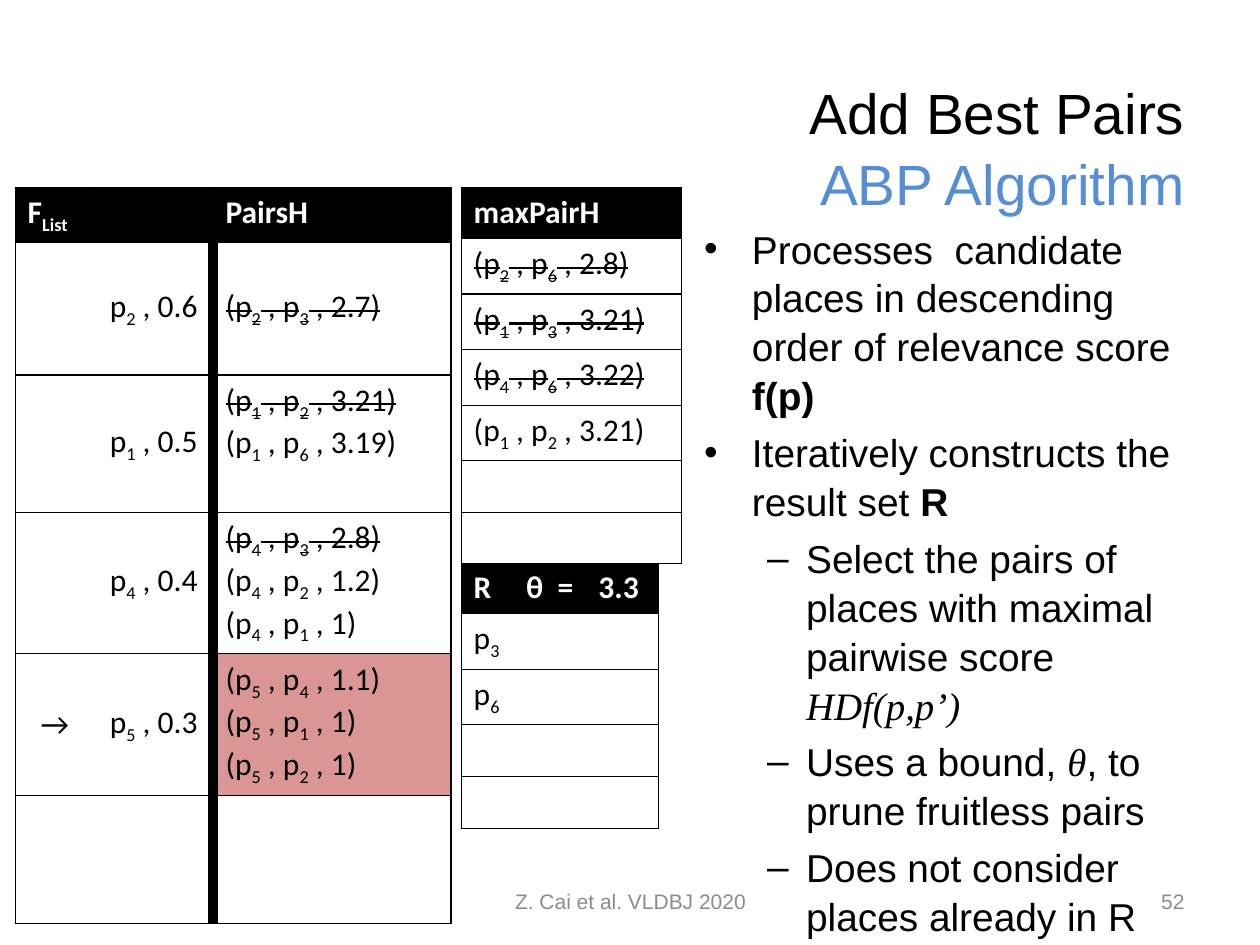
from dataclasses import dataclass
from lxml.etree import SubElement as add_element
from pptx import Presentation
from pptx.dml.color import RGBColor as Color
from pptx.enum.text import MSO_ANCHOR as Anchor, PP_ALIGN as Align
from pptx.oxml import parse_xml
from pptx.oxml.ns import nsdecls, qn
from pptx.util import Inches, Pt


@dataclass(frozen=True)
class Theme:
    black: str = "000000"
    white: str = "FFFFFF"
    accent: str = "558ED5"
    muted: str = "8C8C8C"
    current: str = "D99694"
    sans: str = "Arial"
    serif: str = "Times New Roman"
    table: str = "Calibri"
    title_size: float = 32.4
    body_size: float = 22.2
    table_size: float = 18
    footer_size: float = 12
    thin: float = 0.75
    thick: float = 6
    leading: float = 1.05


theme = Theme()
deck = Presentation()
deck.slide_width, deck.slide_height = Inches(10), Inches(7.5)
page = deck.slides.add_slide(deck.slide_layouts[6])


def area(left, top, width, height):
    """Turn percentages of the slide into a box."""
    sides = (deck.slide_width, deck.slide_height) * 2
    return [int(side * share / 100) for side, share in zip(sides, (left, top, width, height))]


def add_span(para, text, color=theme.black, **formats):
    span = para.add_run()
    span.text = text
    for name, value in formats.items():
        setattr(span.font, name, value)
    span.font.color.rgb = Color.from_string(color)
    return span


def add_text_frame(box, anchor):
    frame = page.shapes.add_textbox(*box).text_frame
    frame.word_wrap = True
    frame.vertical_anchor = anchor
    return frame


# Title and footers
def add_title(box, lines):
    frame = add_text_frame(box, Anchor.MIDDLE)
    for index, (text, color) in enumerate(lines):
        para = frame.add_paragraph() if index else frame.paragraphs[0]
        para.alignment, para.line_spacing = Align.RIGHT, theme.leading
        add_span(para, text, color, name=theme.sans, size=Pt(theme.title_size))


def add_footer(box, text, alignment):
    para = add_text_frame(box, Anchor.MIDDLE).paragraphs[0]
    para.alignment = alignment
    add_span(para, text, theme.muted, name=theme.sans, size=Pt(theme.footer_size))


# Bulleted explanation
PLAIN = {"name": theme.sans}
STRONG = {"name": theme.sans, "bold": True}
MATH = {"name": theme.serif, "italic": True}
LEVELS = [("•", 0.38, 0.38), ("–", 0.81, 0.31)]


def add_bullets(box, items):
    frame = add_text_frame(box, Anchor.TOP)
    for index, (level, spans) in enumerate(items):
        para = frame.add_paragraph() if index else frame.paragraphs[0]
        mark, margin, hang = LEVELS[level]
        para.level, para.line_spacing = level, theme.leading
        if index:
            para.space_before = Pt(theme.body_size * 0.2)
        properties = para._p.get_or_add_pPr()
        properties.set("marL", str(Inches(margin)))
        properties.set("indent", str(-Inches(hang)))
        add_element(properties, qn("a:buFont"), typeface=theme.sans)
        add_element(properties, qn("a:buChar"), char=mark)
        for text, formats in spans:
            add_span(para, text, size=Pt(theme.body_size), **formats)


# Tables
def set_borders(cell, **widths):
    """Draw the four cell edges; a width of 0 leaves an edge out."""
    properties = cell._tc.get_or_add_tcPr()
    for index, edge in enumerate("LRTB"):
        width = widths.get(edge, theme.thin)
        paint = f'<a:solidFill><a:srgbClr val="{theme.black}"/></a:solidFill>' if width else "<a:noFill/>"
        line = f'<a:ln{edge} {nsdecls("a")} w="{Pt(width)}">{paint}</a:ln{edge}>'
        properties.insert(index, parse_xml(line))


def fill_cell(cell, lines, color, header=False, alignment=Align.LEFT, anchor=Anchor.TOP):
    """Write lines; bars enclose a subscript and a leading ~ strikes a line."""
    cell.fill.solid()
    cell.fill.fore_color.rgb = Color.from_string(color)
    cell.vertical_anchor = anchor
    frame = cell.text_frame
    for index, line in enumerate(lines):
        para = frame.add_paragraph() if index else frame.paragraphs[0]
        para.alignment = alignment
        for position, text in enumerate(line.lstrip("~").split("|")):
            if not text:
                continue
            span = add_span(para, text, theme.white if header else theme.black,
                            name=theme.table, size=Pt(theme.table_size), bold=header)
            properties = span.font._element
            if line.startswith("~"):
                properties.set("strike", "sngStrike")
            if position % 2:
                properties.set("baseline", "-25000")


def add_grid(box, columns, rows):
    """Add a table whose column and row weights share out the box."""
    table = page.shapes.add_table(len(rows), len(columns), *box).table
    table.first_row = table.horz_banding = False
    for column, weight in zip(table.columns, columns):
        column.width = int(box[2] * weight / sum(columns))
    for row, weight in zip(table.rows, rows):
        row.height = int(box[3] * weight / sum(rows))
    return table


def add_pairs_table(box, entries):
    table = add_grid(box, (63, 94, 189), (43, 105, 109, 112, 111, 102))
    for column, text in enumerate(("F|List|", "", "PairsH")):
        fill_cell(table.cell(0, column), [text], theme.black, header=True)
        set_borders(table.cell(0, column))
    for row, (marker, place, pairs, color) in enumerate(entries, 1):
        for column, text in enumerate((marker, place)):
            fill_cell(table.cell(row, column), [text], theme.white,
                      alignment=Align.CENTER, anchor=Anchor.MIDDLE)
        fill_cell(table.cell(row, 2), pairs, color,
                  anchor=Anchor.MIDDLE if len(pairs) == 1 else Anchor.TOP)
        set_borders(table.cell(row, 0), R=0)
        set_borders(table.cell(row, 1), L=0, R=theme.thick)
        set_borders(table.cell(row, 2), L=theme.thick)


def add_list_table(box, columns, header, entries):
    """Header cells over full-width entries; filled rows are slightly taller."""
    table = add_grid(box, columns, [41] + [44 if text else 41 for text in entries])
    for column, (text, alignment) in enumerate(header):
        fill_cell(table.cell(0, column), [text], theme.black, True, alignment)
        set_borders(table.cell(0, column))
    last = len(columns) - 1
    for row, text in enumerate(entries, 1):
        if last:
            table.cell(row, 0).merge(table.cell(row, last))
        fill_cell(table.cell(row, 0), [text], theme.white)
        for column in range(len(columns)):
            set_borders(table.cell(row, column))


add_title(area(21.7, 7.07, 73.3, 16.67),
          [("Add Best Pairs", theme.black), ("ABP Algorithm", theme.accent)])
add_footer(area(71.7, 92.67, 23.3, 5.33), "52", Align.RIGHT)
add_list_table(area(36.6, 59.47, 15.7, 28.13), (33, 66, 58),
               [("R", Align.LEFT), ("θ  =", Align.RIGHT), ("3.3", Align.LEFT)],
               ["p|3|", "p|6|", "", ""])
add_pairs_table(area(1.2, 19.8, 34.6, 77.6), [
    ("", "p|2| , 0.6", ["~(p|2| , p|3| , 2.7)"], theme.white),
    ("", "p|1| , 0.5", ["~(p|1| , p|2| , 3.21)", "(p|1| , p|6| , 3.19)"], theme.white),
    ("", "p|4| , 0.4", ["~(p|4| , p|3| , 2.8)", "(p|4| , p|2| , 1.2)", "(p|4| , p|1| , 1)"], theme.white),
    ("→", "p|5| , 0.3", ["(p|5| , p|4| , 1.1)", "(p|5| , p|1| , 1)", "(p|5| , p|2| , 1)"], theme.current),
    ("", "", [""], theme.white),
])
add_list_table(area(36.6, 19.8, 17.5, 39.6), (1,), [("maxPairH", Align.LEFT)],
               ["~(p|2| , p|6| , 2.8)", "~(p|1| , p|3| , 3.21)", "~(p|4| , p|6| , 3.22)",
                "(p|1| , p|2| , 3.21)", "", ""])
add_bullets(area(54.9, 22.93, 42.3, 70.13), [
    (0, [("Processes  candidate places in descending order of relevance score ", PLAIN), ("f(p)", STRONG)]),
    (0, [("Iteratively constructs the result set ", PLAIN), ("R", STRONG)]),
    (1, [("Select the pairs of places with maximal pairwise score ", PLAIN), ("HDf(p,p’)", MATH)]),
    (1, [("Uses a bound, ", PLAIN), ("θ", MATH), (", to prune fruitless pairs", PLAIN)]),
    (1, [("Does not consider places already in R", PLAIN)]),
])
add_footer(area(34.2, 92.67, 31.7, 5.33), "Z. Cai et al. VLDBJ 2020", Align.CENTER)
deck.save("out.pptx")
